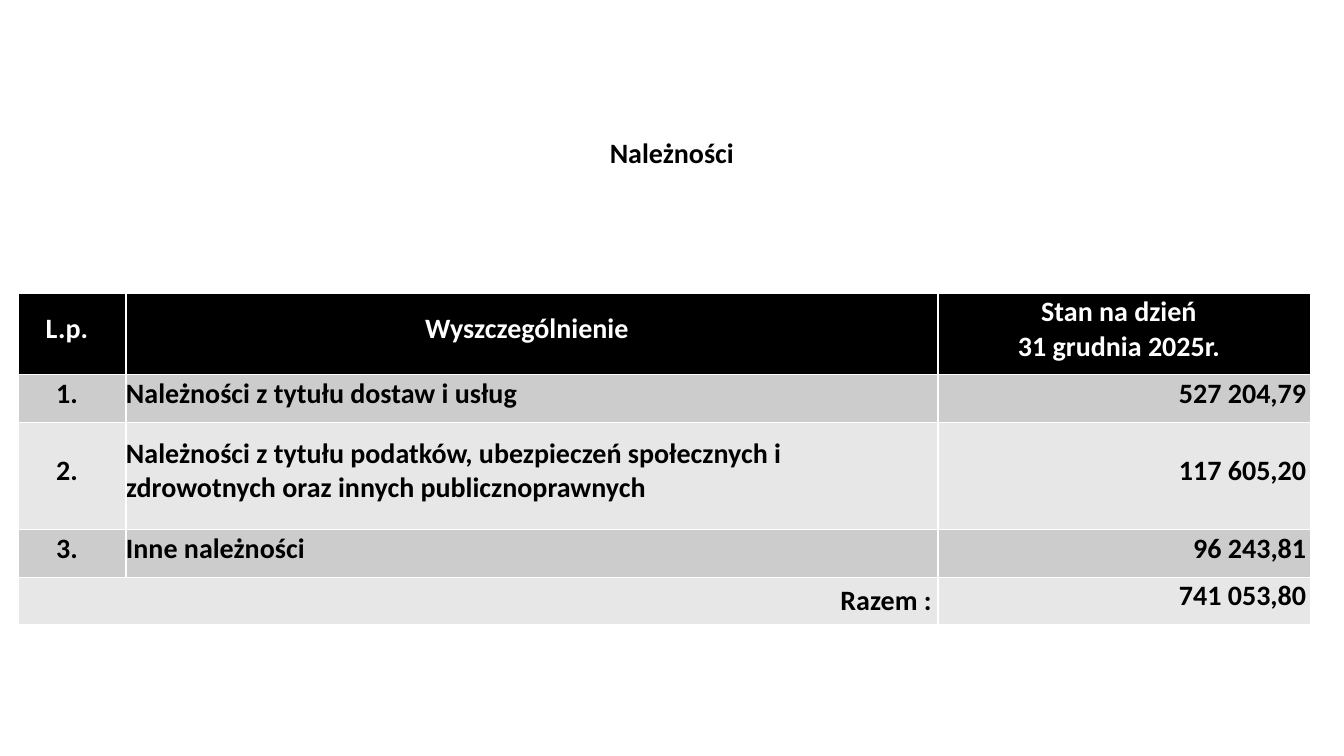
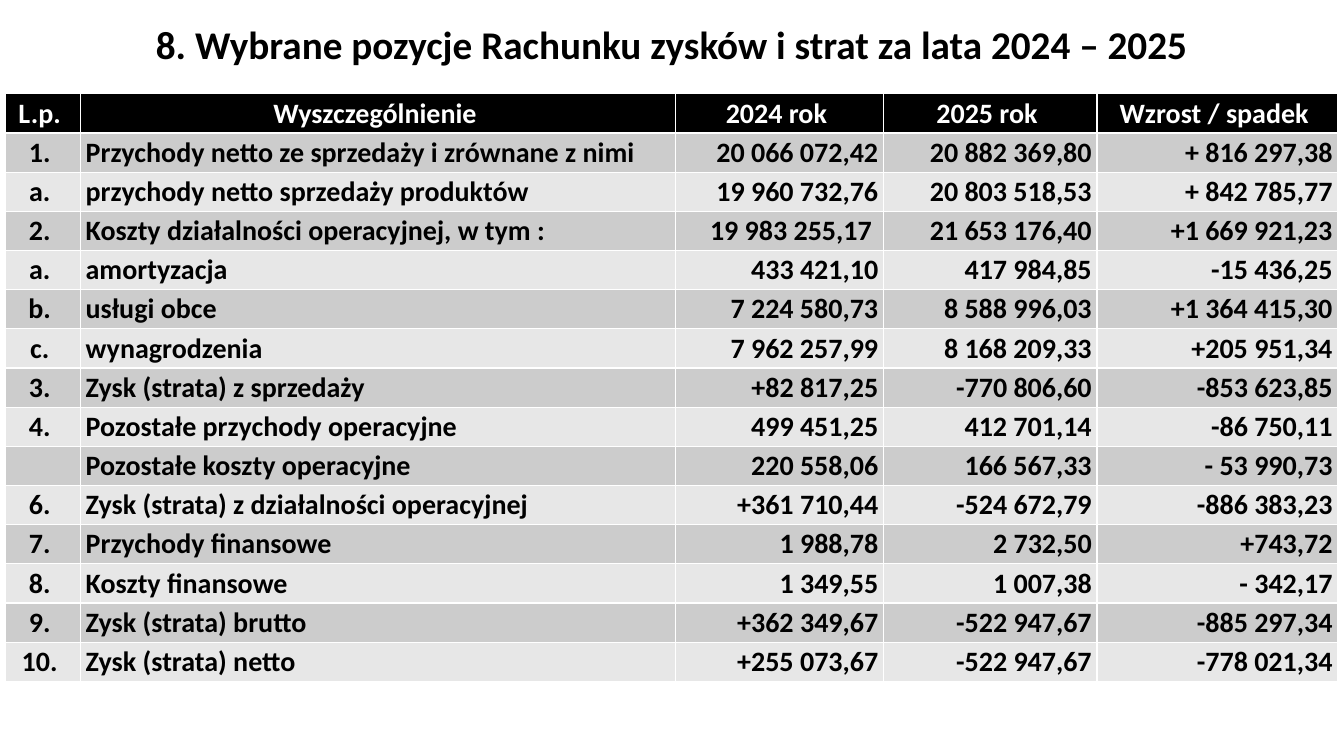
import pptx
import pptx.dml.color
import pptx.enum.text
import pptx.oxml
import pptx.oxml.ns
import pptx.util

Pt = pptx.util.Pt
RGBColor = pptx.dml.color.RGBColor
ALIGN = pptx.enum.text.PP_ALIGN
ANCHOR = pptx.enum.text.MSO_ANCHOR

BLACK = RGBColor(0x00, 0x00, 0x00)
WHITE = RGBColor(0xFF, 0xFF, 0xFF)
DARK_BAND = RGBColor(0xCC, 0xCC, 0xCC)
LIGHT_BAND = RGBColor(0xE7, 0xE7, 0xE7)

FONT = {"name": "Calibri", "bold": True}
BODY_SIZE = 20
CENTRE_SHIFT = 4.5

RECEIVABLES = [
    ("L.p.", "Wyszczególnienie", "Stan na dzień\n31 grudnia 2025r."),
    ("1.", "Należności z tytułu dostaw i usług", "527 204,79"),
    ("2.", "Należności z tytułu podatków, ubezpieczeń społecznych i "
           "zdrowotnych oraz innych publicznoprawnych", "117 605,20"),
    ("3.", "Inne należności", "96 243,81"),
    ("Razem :", "", "741 053,80"),
]

PROFIT_AND_LOSS = [
    ("L.p.", "Wyszczególnienie", "2024 rok", "2025 rok", "Wzrost / spadek"),
    ("1.", "Przychody netto ze sprzedaży i zrównane z nimi",
     "20 066 072,42", "20 882 369,80", "+ 816 297,38"),
    ("a.", "przychody netto sprzedaży produktów",
     "19 960 732,76", "20 803 518,53", "+ 842 785,77"),
    ("2.", "Koszty działalności operacyjnej, w tym :",
     "19 983 255,17 ", "21 653 176,40", "+1 669 921,23"),
    ("a.", "amortyzacja", "433 421,10", "417 984,85", "-15 436,25"),
    ("b.", "usługi obce", "7 224 580,73", "8 588 996,03", "+1 364 415,30"),
    ("c.", "wynagrodzenia", "7 962 257,99", "8 168 209,33", "+205 951,34"),
    ("3.", "Zysk (strata) z sprzedaży", "+82 817,25", "-770 806,60", "-853 623,85"),
    ("4.", "Pozostałe przychody operacyjne", "499 451,25", "412 701,14", "-86 750,11"),
    ("", "Pozostałe koszty operacyjne", "220 558,06", "166 567,33", "- 53 990,73"),
    ("6.", "Zysk (strata) z działalności operacyjnej",
     "+361 710,44", "-524 672,79", "-886 383,23"),
    ("7.", "Przychody finansowe", "1 988,78", "2 732,50", "+743,72"),
    ("8.", "Koszty finansowe", "1 349,55", "1 007,38", "- 342,17"),
    ("9.", "Zysk (strata) brutto", "+362 349,67", "-522 947,67", "-885 297,34"),
    ("10.", "Zysk (strata) netto", "+255 073,67", "-522 947,67", "-778 021,34"),
]


def apply_format(target, values):
    """Set each named attribute of the target to its value."""
    for name, value in values.items():
        setattr(target, name, value)


def write_paragraph(para, text, size, color, layout):
    """Write one formatted span into a paragraph."""
    apply_format(para, layout)
    if text:
        span = para.add_run()
        span.text = text
        apply_format(span.font, {**FONT, "size": Pt(size)})
        span.font.color.rgb = color


def add_title(page, bounds, text, size, space_after=0):
    """Add a centred title inside the given bounds."""
    box = page.shapes.add_textbox(*map(Pt, bounds))
    frame = box.text_frame
    apply_format(frame, {
        "word_wrap": True, "vertical_anchor": ANCHOR.MIDDLE,
        "margin_left": Pt(5), "margin_right": Pt(5),
        "margin_top": Pt(2.9), "margin_bottom": Pt(2.9)})
    write_paragraph(frame.paragraphs[0], text, size, BLACK, {
        "alignment": ALIGN.CENTER, "line_spacing": 0.9,
        "space_after": Pt(space_after)})


def set_borders(cell, sides):
    """Draw thin white borders on the named sides of a cell."""
    properties = cell._tc.get_or_add_tcPr()
    for index, side in enumerate(sides):
        properties.insert(index, pptx.oxml.parse_xml(
            f'<a:ln{side} {pptx.oxml.ns.nsdecls("a")} w="{Pt(1)}">'
            f'<a:solidFill><a:srgbClr val="{WHITE}"/></a:solidFill></a:ln{side}>'))


def fill_cell(cell, text, color, fill, alignment, margins, anchor):
    """Fill a cell and write its lines of text."""
    cell.fill.solid()
    cell.fill.fore_color.rgb = fill
    left, top, right, bottom = margins
    if alignment == ALIGN.CENTER:
        right += CENTRE_SHIFT
    apply_format(cell, {
        "margin_left": Pt(left), "margin_top": Pt(top),
        "margin_right": Pt(right), "margin_bottom": Pt(bottom),
        "vertical_anchor": anchor})
    frame = cell.text_frame
    for index, line in enumerate(text.split("\n")):
        para = frame.add_paragraph() if index else frame.paragraphs[0]
        write_paragraph(para, line, BODY_SIZE, color, {"alignment": alignment})


def add_banded_table(page, corner, widths, heights, rows, margins, anchor):
    """Add a table with a black header and grey bands, and return it."""
    bounds = (*corner, sum(widths), sum(heights))
    table = page.shapes.add_table(len(rows), len(widths), *map(Pt, bounds)).table
    apply_format(table, {"first_row": False, "horz_banding": False})
    for column, width in zip(table.columns, widths):
        column.width = Pt(width)
    for row, height in zip(table.rows, heights):
        row.height = Pt(height)
    last_row, last_column = len(rows) - 1, len(widths) - 1
    body_alignments = [ALIGN.CENTER, ALIGN.LEFT] + [ALIGN.RIGHT] * (last_column - 1)
    for row_index, texts in enumerate(rows):
        is_header = row_index == 0
        band = DARK_BAND if row_index % 2 else LIGHT_BAND
        for column_index, text in enumerate(texts):
            cell = table.cell(row_index, column_index)
            fill_cell(cell, text, WHITE if is_header else BLACK,
                      BLACK if is_header else band,
                      ALIGN.CENTER if is_header else body_alignments[column_index],
                      margins, anchor)
            inner = {"L": column_index > 0, "R": column_index < last_column,
                     "T": row_index > 0, "B": row_index < last_row}
            set_borders(cell, [side for side, shown in inner.items() if shown])
    return table


def build_receivables(page):
    """Build the slide of receivables with its total row."""
    add_title(page, (179.3, 77.8, 601.2, 65.5), "Należności", 20, 4.5)
    table = add_banded_table(
        page, (13, 209.3), (77, 580, 266), (58, 34.2, 76.5, 34.2, 34.2),
        RECEIVABLES, (0, 1.5, 2.9, 8.6), ANCHOR.MIDDLE)
    total = table.cell(4, 0)
    total.merge(table.cell(4, 1))
    apply_format(total, {"margin_top": 0, "margin_bottom": 0,
                         "margin_right": Pt(CENTRE_SHIFT)})
    total.text_frame.paragraphs[0].alignment = ALIGN.RIGHT


def build_profit_and_loss(page):
    """Build the slide comparing profit and loss items of two years."""
    add_title(page, (62, 0, 835, 67),
              "8. Wybrane pozycje Rachunku zysków i strat za lata 2024 – 2025", 28)
    add_banded_table(
        page, (3.6, 67), (54, 425, 148.5, 152.5, 172),
        [28] * len(PROFIT_AND_LOSS), PROFIT_AND_LOSS,
        (3.6, 1.8, 3.6, 1.8), ANCHOR.TOP)


def main():
    """Create and save the deck."""
    deck = pptx.Presentation()
    apply_format(deck, {"slide_width": Pt(960), "slide_height": Pt(540)})
    for build in (build_receivables, build_profit_and_loss):
        build(deck.slides.add_slide(deck.slide_layouts[6]))
    deck.save("out.pptx")


if __name__ == "__main__":
    main()
